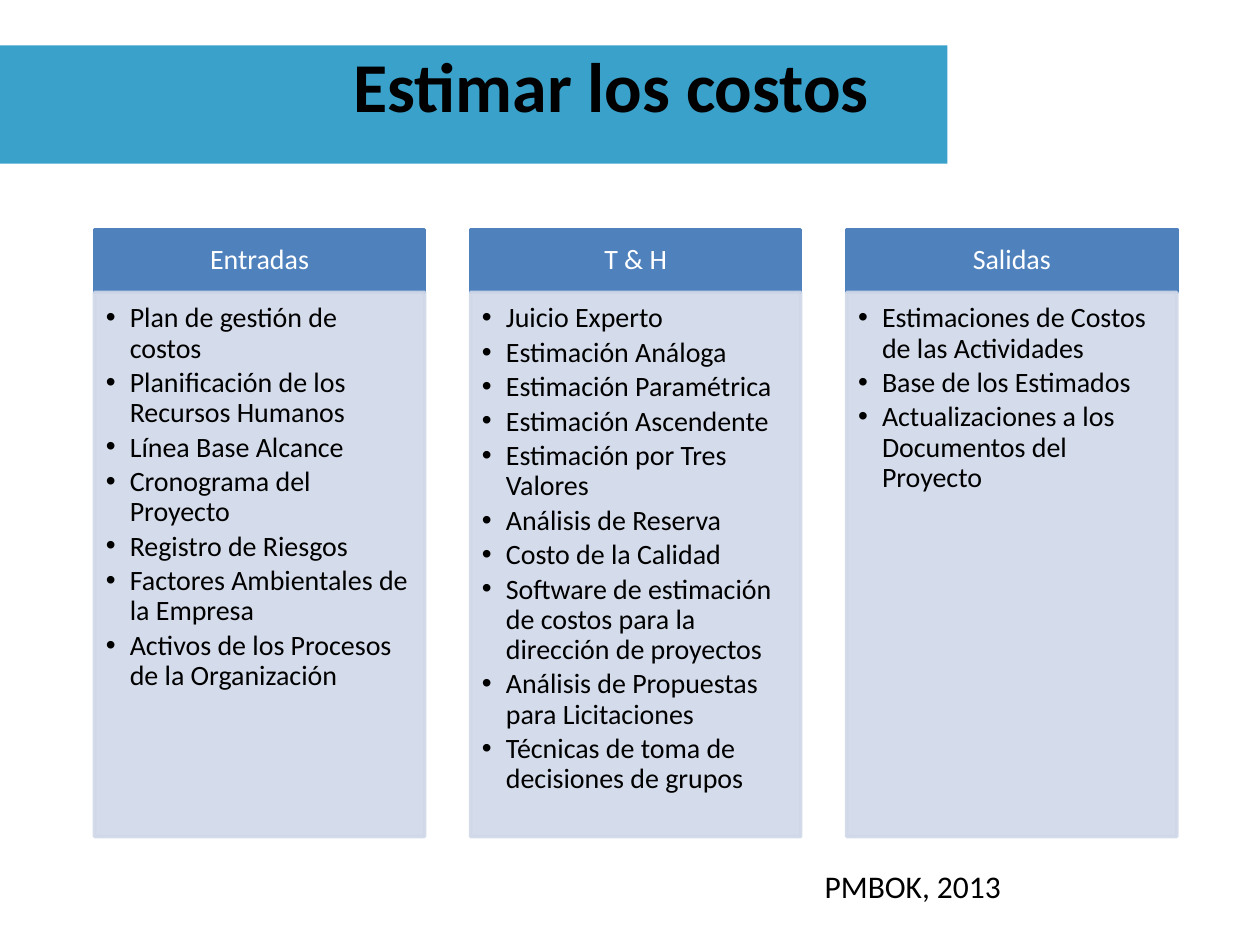
from dataclasses import dataclass

from lxml.etree import SubElement
from pptx import Presentation
from pptx.dml.color import RGBColor
from pptx.enum.shapes import MSO_SHAPE
from pptx.enum.text import MSO_ANCHOR, PP_ALIGN
from pptx.oxml.ns import qn
from pptx.util import Inches, Pt


@dataclass(frozen=True)
class Theme:
    font: str = "Calibri"
    band: str = "3AA1CA"
    head: str = "4F81BD"
    body: str = "D0D8E8"
    dark: str = "000000"
    light: str = "FFFFFF"
    title: int = 40
    note: int = 18
    text: int = 16


THEME = Theme()

COLUMNS = [
    ("Entradas", [
        "Plan de gestión de costos",
        "Planificación de los Recursos Humanos",
        "Línea Base Alcance",
        "Cronograma del Proyecto",
        "Registro de Riesgos",
        "Factores Ambientales de la Empresa",
        "Activos de los Procesos de la Organización",
    ]),
    ("T & H", [
        "Juicio Experto",
        "Estimación Análoga",
        "Estimación Paramétrica",
        "Estimación Ascendente",
        "Estimación por Tres Valores",
        "Análisis de Reserva",
        "Costo de la Calidad",
        "Software de estimación de costos para la dirección de proyectos",
        "Análisis de Propuestas para Licitaciones",
        "Técnicas de toma de decisiones de grupos",
    ]),
    ("Salidas", [
        "Estimaciones de Costos de las Actividades",
        "Base de los Estimados",
        "Actualizaciones a los Documentos del Proyecto",
    ]),
]


def add_bullet(para):
    props = para._p.get_or_add_pPr()
    props.set("marL", str(Inches(0.19)))
    props.set("indent", str(-Inches(0.19)))
    SubElement(props, qn("a:buFont"), typeface="Arial")
    SubElement(props, qn("a:buChar"), char="•")


def write(frame, *lines, size=THEME.text, color=THEME.dark, bold=False,
          align=PP_ALIGN.CENTER, anchor=MSO_ANCHOR.TOP, bullet=False,
          spacing=None, after=None, insets=(0.1, 0.05, 0.1, 0.05)):
    """Fill a text frame with one paragraph per line; insets in inches."""
    frame.word_wrap = True
    frame.vertical_anchor = anchor
    (frame.margin_left, frame.margin_top,
     frame.margin_right, frame.margin_bottom) = map(Inches, insets)
    for i, line in enumerate(lines):
        para = frame.add_paragraph() if i else frame.paragraphs[0]
        if bullet:
            add_bullet(para)
        para.alignment = align
        if spacing:
            para.line_spacing = spacing
        if after:
            para.space_after = Pt(after)
        run = para.add_run()
        run.text = line
        run.font.name = THEME.font
        run.font.size = Pt(size)
        run.font.bold = bold
        run.font.color.rgb = RGBColor.from_string(color)


def add_rect(slide, box, color, border=False, alpha=None):
    shape = slide.shapes.add_shape(MSO_SHAPE.RECTANGLE, *box)
    shape.shadow.inherit = False
    fills = [shape.fill]
    if border:
        shape.line.width = Pt(2)
        fills.append(shape.line.fill)
    else:
        shape.line.fill.background()
    for fill in fills:
        fill.solid()
        fill.fore_color.rgb = RGBColor.from_string(color)
    if alpha:
        for tint in shape.element.spPr.iter(qn("a:srgbClr")):
            SubElement(tint, qn("a:alpha"), val=str(alpha * 1000))
    return shape


def add_title(slide, box, text):
    left, top, width, height = box
    band = add_rect(slide, (left, top, width, height), THEME.band)
    title = slide.shapes.title
    title.element.addprevious(band.element)
    title.left, title.top = left + Inches(0.35), top - Inches(0.07)
    title.width, title.height = Inches(9), Inches(1.25)
    write(title.text_frame, text, size=THEME.title, bold=True)


def add_column(slide, box, name, items):
    left, top, width, height = box
    bar = Inches(0.5)
    head = add_rect(slide, (left, top, width, bar), THEME.head, border=True)
    write(head.text_frame, name, color=THEME.light, anchor=MSO_ANCHOR.MIDDLE,
          spacing=0.9, insets=(0.12, 0.07, 0.12, 0.07))
    body = add_rect(slide, (left, top + bar, width, height - bar),
                    THEME.body, border=True, alpha=90)
    write(body.text_frame, *items, align=PP_ALIGN.LEFT, bullet=True,
          spacing=0.9, after=THEME.text * 0.15,
          insets=(0.09, 0.09, 0.12, 0.14))


def add_columns(slide, box, columns):
    """Spread equal columns across the box."""
    left, top, width, height = box
    wide = Inches(2.62)
    step = (width - wide) // (len(columns) - 1)
    for i, (name, items) in enumerate(columns):
        add_column(slide, (left + i * step, top, wide, height), name, items)


def add_note(slide, box, text):
    note = slide.shapes.add_textbox(*box)
    write(note.text_frame, text, size=THEME.note)


def main():
    deck = Presentation()
    deck.slide_width, deck.slide_height = Inches(10), Inches(7.5)
    slide = deck.slides.add_slide(deck.slide_layouts.get_by_name("Title Only"))
    add_title(slide, (0, Inches(0.36), Inches(7.52), Inches(0.94)),
              "Estimar los costos")
    add_columns(slide, (Inches(0.75), Inches(1.82), Inches(8.59), Inches(4.82)),
                COLUMNS)
    add_note(slide, (Inches(5.33), Inches(6.83), Inches(3.83), Inches(0.4)),
             "PMBOK, 2013")
    deck.save("out.pptx")


if __name__ == "__main__":
    main()
